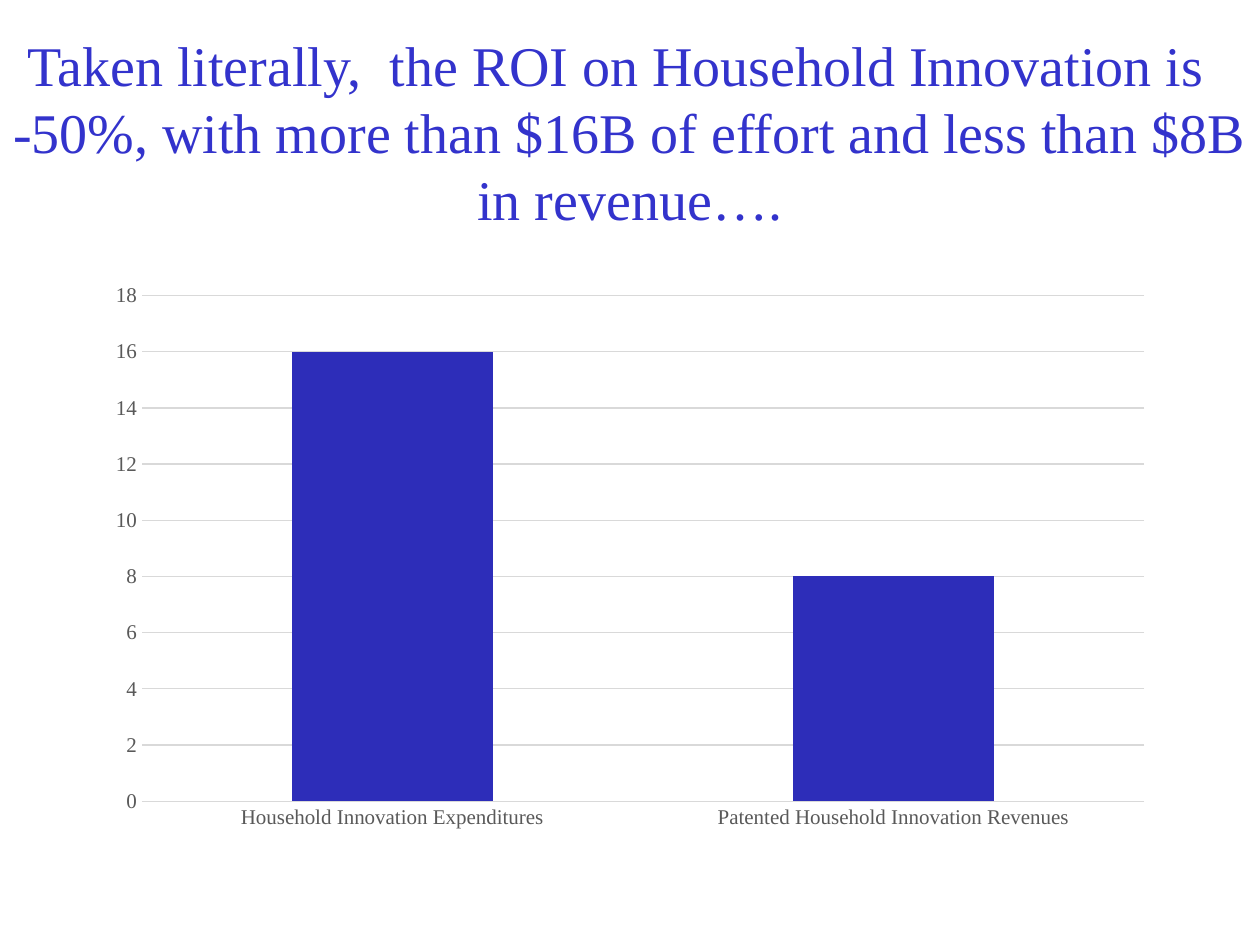
from pptx import Presentation, util as u
from pptx.chart import data
from pptx.dml.color import RGBColor
from pptx.enum import chart as ch, text

COLORS = {"title": "3333CC", "bar": "2D2DB9", "label": "595959", "rule": "D9D9D9"}
FONT = "Times New Roman"


class Deck:
    def __init__(self, width, height):
        self.deck = Presentation()
        self.deck.slide_width, self.deck.slide_height = u.Pt(width), u.Pt(height)
        self.slide = self.deck.slides.add_slide(self.deck.slide_layouts[5])

    def style_font(self, font, size, color):
        font.name, font.size = FONT, u.Pt(size)
        font.color.rgb = RGBColor.from_string(COLORS[color])

    def style_rule(self, line):
        line.color.rgb = RGBColor.from_string(COLORS["rule"])
        line.width = u.Pt(0.75)

    def title(self, wording, left, top, width, height):
        headline = self.slide.shapes.title
        headline.left, headline.top = u.Pt(left), u.Pt(top)
        headline.width, headline.height = u.Pt(width), u.Pt(height)
        frame = headline.text_frame
        frame.text = wording
        frame.word_wrap = True
        frame.auto_size = text.MSO_AUTO_SIZE.NONE
        frame.vertical_anchor = text.MSO_ANCHOR.MIDDLE
        paragraph = frame.paragraphs[0]
        paragraph.alignment = text.PP_ALIGN.CENTER
        self.style_font(paragraph.font, 32, "title")

    def column_chart(self, amounts, left, top, width, height):
        figures = data.CategoryChartData()
        figures.categories = list(amounts)
        figures.add_series("Series 1", list(amounts.values()))
        chart = self.slide.shapes.add_chart(
            ch.XL_CHART_TYPE.COLUMN_STACKED,
            u.Pt(left), u.Pt(top), u.Pt(width), u.Pt(height), figures).chart
        chart.has_legend = chart.has_title = False
        self.style_font(chart.font, 12, "label")

        columns = chart.plots[0]
        columns.gap_width, columns.overlap = 150, 100
        columns.vary_by_categories = False
        bars = columns.series[0].format.fill
        bars.solid()
        bars.fore_color.rgb = RGBColor.from_string(COLORS["bar"])

        categories, values = chart.category_axis, chart.value_axis
        for axis in (categories, values):
            axis.major_tick_mark = axis.minor_tick_mark = ch.XL_TICK_MARK.NONE
            self.style_font(axis.tick_labels.font, 12, "label")
        self.style_rule(categories.format.line)
        values.format.line.fill.background()
        values.minimum_scale, values.maximum_scale, values.major_unit = 0, 18, 2
        values.has_major_gridlines = True
        self.style_rule(values.major_gridlines.format.line)

    def save(self):
        self.deck.save("out.pptx")


def main():
    deck = Deck(720, 540)
    deck.title(
        "Taken literally,  the ROI on Household Innovation is   -50%, "
        "with more than $16B of effort and less than $8B in revenue….",
        0, 30, 720, 90)
    deck.column_chart(
        {"Household Innovation Expenditures": 16,
         "Patented Household Innovation Revenues": 8},
        54, 156, 612, 324)
    deck.save()


if __name__ == "__main__":
    main()
